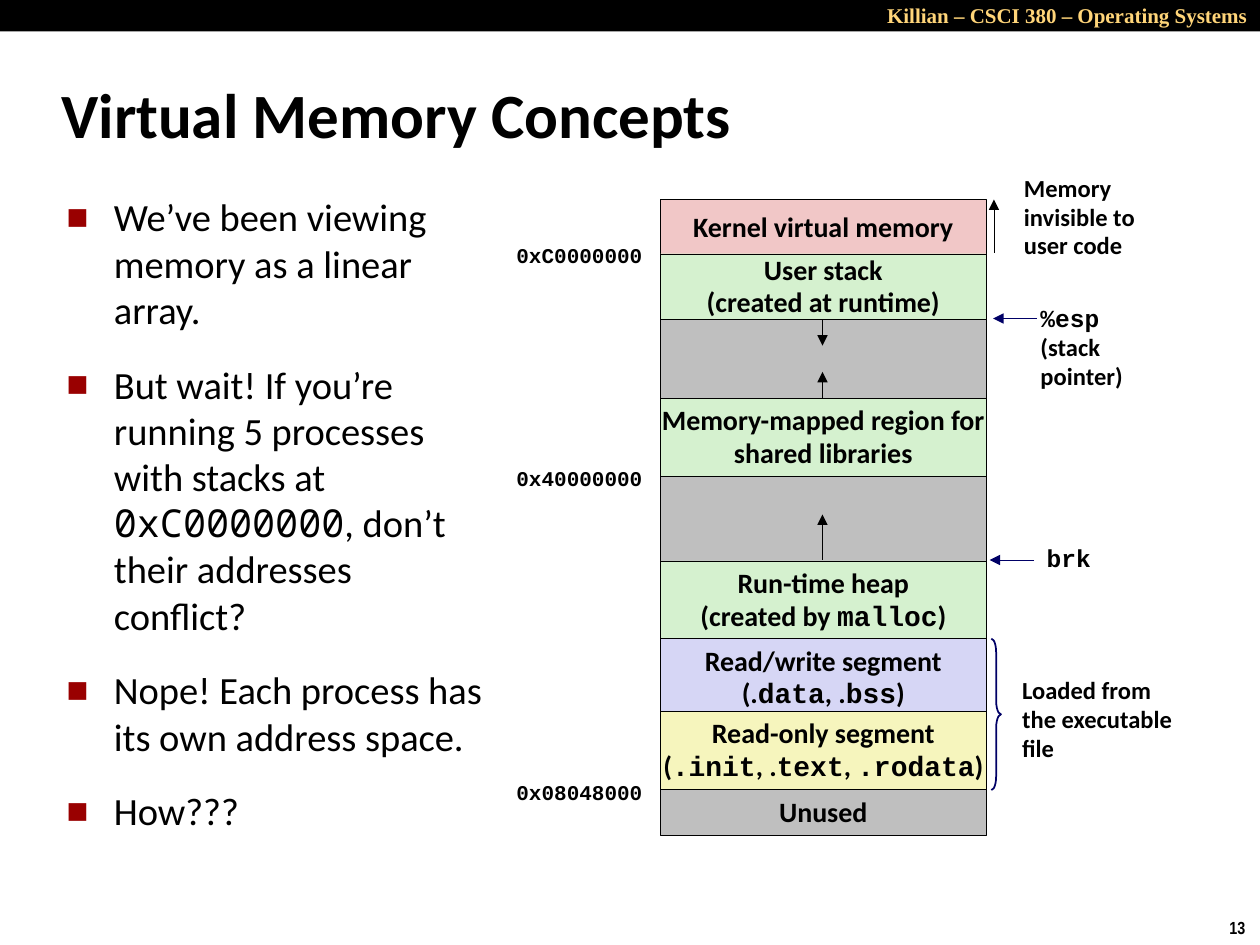
from lxml.etree import SubElement
from pptx import Presentation
from pptx.dml.color import RGBColor
from pptx.enum.shapes import MSO_CONNECTOR, MSO_SHAPE
from pptx.enum.text import MSO_ANCHOR, PP_ALIGN
from pptx.oxml.ns import qn
from pptx.util import Pt

COLORS = {
    "black": "000000", "gold": "FFD579", "bullet": "990000", "navy": "000066",
    "gray": "BFBFBF", "pink": "F1C7C7", "green": "D5F1CF",
    "lilac": "D6D6F5", "yellow": "F6F5BD",
}


def color(name):
    return RGBColor.from_string(COLORS[name])


def write(tf, text, size=14, font="Calibri", mono="Courier New", bold=True, ink="black",
          align=PP_ALIGN.LEFT, anchor=MSO_ANCHOR.TOP, wrap=True, spacing=None):
    """Fill a text frame: newlines part paragraphs, backticks enclose code."""
    tf.word_wrap = wrap
    tf.vertical_anchor = anchor
    for i, line in enumerate(text.split("\n")):
        p = tf.paragraphs[0] if i == 0 else tf.add_paragraph()
        p.alignment = align
        p.line_spacing = spacing
        for j, part in enumerate(line.split("`")):
            if part:
                r = p.add_run()
                r.text = part
                r.font.name = mono if j % 2 else font
                r.font.size = Pt(size)
                r.font.bold = bold
                r.font.color.rgb = color(ink)


prs = Presentation()
prs.slide_width, prs.slide_height = Pt(720), Pt(540)
s = prs.slides.add_slide(prs.slide_layouts[6])

# Header bar
bar = s.shapes.add_shape(MSO_SHAPE.RECTANGLE, 0, 0, Pt(720), Pt(18))
bar.shadow.inherit = False
bar.fill.solid()
bar.fill.fore_color.rgb = color("black")
bar.line.fill.background()

# Free text: left, top, width, height, text, format
code = dict(size=12, spacing=0.94)
note = dict(spacing=0.98)
texts = [
    (473.75, -2, 246.25, 21.6, "Killian – CSCI 380 – Operating Systems",
     dict(size=12, font="Times New Roman", ink="gold", align=PP_ALIGN.RIGHT)),
    (695.5, 520.5, 24.5, 19.5, "13", dict(size=10, font="Arial Narrow", wrap=False)),
    (28, 34.5, 598, 60, "Virtual Memory Concepts", dict(size=36, anchor=MSO_ANCHOR.MIDDLE)),
    (288, 136, 90, 21.6, "`0xC0000000`", code),
    (288, 263.5, 90, 21.6, "`0x40000000`", code),
    (288, 443, 90, 21.6, "`0x08048000`", code),
    (578, 96, 86.5, 57.5, "Memory\ninvisible to\nuser code", note),
    (587.5, 170.5, 78, 57, "`%esp`\n(stack\npointer)", note),
    (591, 308, 47, 24, "`brk`", dict(spacing=0.94)),
    (577, 383, 107, 57.5, "Loaded from the executable file", note),
]
for left, top, width, height, text, fmt in texts:
    tb = s.shapes.add_textbox(Pt(left), Pt(top), Pt(width), Pt(height))
    write(tb.text_frame, text, **fmt)

# Bulleted argument
body = s.shapes.add_textbox(Pt(31), Pt(107), Pt(257), Pt(392))
write(body.text_frame,
      "We’ve been viewing memory as a linear array.\n"
      "But wait! If you’re running 5 processes with stacks at `0xC0000000`, "
      "don’t their addresses conflict?\n"
      "Nope! Each process has its own address space.\n"
      "How???",
      size=22, mono="Noto Sans Mono", bold=False)
for p in body.text_frame.paragraphs:
    p.space_before, p.space_after = Pt(4.4), Pt(12)
    pPr = p._p.get_or_add_pPr()
    pPr.set("marL", str(Pt(27)))
    pPr.set("indent", str(-Pt(27)))
    SubElement(SubElement(pPr, qn("a:buClr")), qn("a:srgbClr"), val=COLORS["bullet"])
    SubElement(pPr, qn("a:buSzPct"), val="60000")
    SubElement(pPr, qn("a:buFont"), typeface="Calibri")
    SubElement(pPr, qn("a:buChar"), char="■")

# Memory map, high addresses first: top, height, fill, text
regions = [
    (114, 32, "pink", "Kernel virtual memory"),
    (145, 37.5, "green", "User stack\n(created at runtime)"),
    (182.5, 45, "gray", ""),
    (227.5, 44.5, "green", "Memory-mapped region for\nshared libraries"),
    (272, 48.5, "gray", ""),
    (320.5, 44.5, "green", "Run-time heap\n(created by `malloc`)"),
    (365, 44.5, "lilac", "Read/write segment\n(.`data`, .`bss`)"),
    (406.5, 44.5, "yellow", "Read-only segment\n(`.init`, .`text`, `.rodata`)"),
    (451, 26.5, "gray", "Unused"),
]
for top, height, fill, text in regions:
    box = s.shapes.add_shape(MSO_SHAPE.RECTANGLE, Pt(377.5), Pt(top), Pt(186), Pt(height))
    box.shadow.inherit = False
    box.fill.solid()
    box.fill.fore_color.rgb = color(fill)
    box.line.color.rgb = color("black")
    box.line.width = Pt(0.25)
    if text:
        write(box.text_frame, text, size=16, align=PP_ALIGN.CENTER,
              anchor=MSO_ANCHOR.MIDDLE, wrap=False, spacing=0.98)

# Arrows: from x, from y, to x, to y, colour
arrows = [
    (568, 144.5, 568, 114, "black"),
    (470, 182.5, 470, 197.5, "black"),
    (470, 228, 470, 212.5, "black"),
    (470, 320, 470, 294, "black"),
    (592.5, 182, 567.5, 182, "navy"),
    (591, 320, 565.5, 320, "navy"),
]
for x1, y1, x2, y2, ink in arrows:
    arrow = s.shapes.add_connector(MSO_CONNECTOR.STRAIGHT, Pt(x1), Pt(y1), Pt(x2), Pt(y2))
    arrow.line.color.rgb = color(ink)
    arrow.line.width = Pt(0.25)
    SubElement(arrow.line._get_or_add_ln(), qn("a:tailEnd"), type="triangle")
    SubElement(arrow._element.spPr, qn("a:effectLst"))

# Brace over the segments loaded from the file
brace = s.shapes.add_shape(MSO_SHAPE.RIGHT_BRACE, Pt(566.5), Pt(365), Pt(5.5), Pt(86.5))
brace.shadow.inherit = False
brace.adjustments[0] = 1.42
brace.fill.background()
brace.line.color.rgb = color("navy")
brace.line.width = Pt(1)

prs.save("out.pptx")
